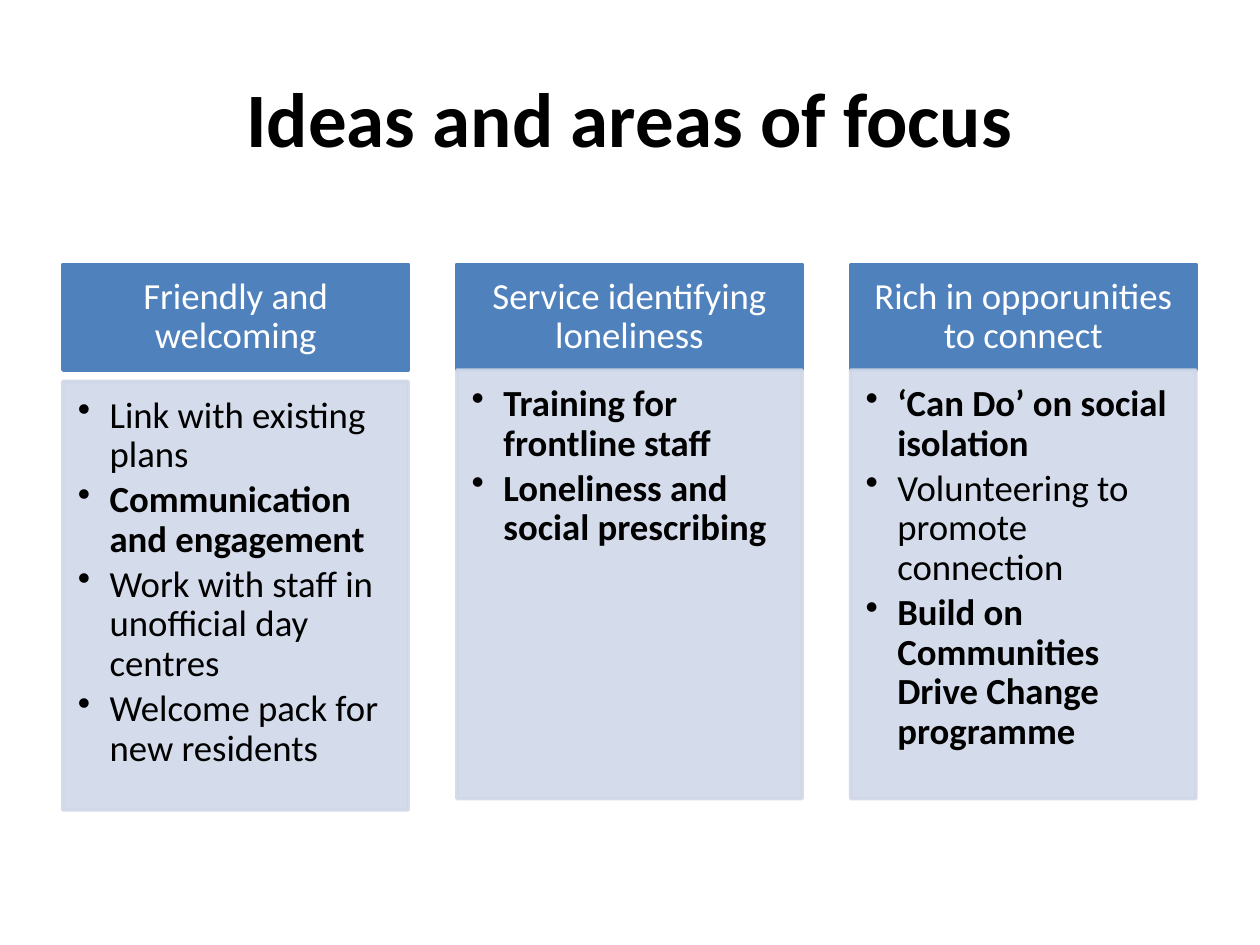
import pptx
import pptx.util
import pptx.dml.color
import pptx.enum.shapes
import pptx.enum.text
import pptx.oxml.ns
import lxml.etree
from pptx.util import Cm

TITLE = "Ideas and areas of focus"
COLUMNS = [
    {"heading": "Friendly and welcoming", "gap": 0.23, "ideas": [
        ("Link with existing plans", False),
        ("Communication and engagement", True),
        ("Work with staff in unofficial day centres", False),
        ("Welcome pack for new residents", False)]},
    {"heading": "Service identifying loneliness", "gap": 0, "ideas": [
        ("Training for frontline staff", True),
        ("Loneliness and social prescribing", True)]},
    {"heading": "Rich in opporunities to connect", "gap": 0, "ideas": [
        ("‘Can Do’ on social isolation", True),
        ("Volunteering to promote connection", False),
        ("Build on Communities Drive Change programme", True)]},
]
COLORS = {"heading": "4F81BD", "body": "D0D8E8", "dark": "000000", "light": "FFFFFF"}
FONT = "Calibri"
LEFT, TOP, WIDTH, PITCH = 1.27, 5.33, 6.96, 7.94
HEADING_HEIGHT, BODY_HEIGHT = 2.13, 8.64
HEADING_INSETS = (0.41, 0.23, 0.41, 0.23)
BODY_INSETS = (0.3, 0.3, 0.41, 0.46)

ALIGN = pptx.enum.text.PP_ALIGN
ANCHOR = pptx.enum.text.MSO_ANCHOR


def rgb(name):
    return pptx.dml.color.RGBColor.from_string(COLORS[name])


def add_child(parent, tag, **attributes):
    return lxml.etree.SubElement(parent, pptx.oxml.ns.qn(tag), **attributes)


def write(paragraph, text, size=21, color="dark", bold=False, align=ALIGN.LEFT,
          line_spacing=None, space_after=None, bullet=False):
    paragraph.alignment = align
    paragraph.line_spacing = line_spacing
    if space_after is not None:
        paragraph.space_after = pptx.util.Pt(space_after)
    if bullet:
        paragraph.level = 1
        properties = paragraph._p.get_or_add_pPr()
        properties.set("marL", str(Cm(0.64)))
        properties.set("indent", str(-Cm(0.64)))
        add_child(properties, "a:buChar", char="•")
    run = paragraph.add_run()
    run.text = text
    run.font.name = FONT
    run.font.size = pptx.util.Pt(size)
    run.font.bold = bold
    run.font.color.rgb = rgb(color)


def set_frame(frame, insets, anchor):
    frame.word_wrap = True
    frame.vertical_anchor = anchor
    frame.margin_left, frame.margin_top, frame.margin_right, frame.margin_bottom = map(Cm, insets)


def add_box(slide, left, top, height, color, insets, anchor, opacity=100):
    shape = slide.shapes.add_shape(pptx.enum.shapes.MSO_SHAPE.RECTANGLE,
                                   Cm(left), Cm(top), Cm(WIDTH), Cm(height))
    shape.shadow.inherit = False
    shape.line.width = pptx.util.Pt(2)
    for fill in (shape.fill, shape.line.fill):
        fill.solid()
        fill.fore_color.rgb = rgb(color)
    if opacity < 100:
        for element in shape._element.spPr.iter(pptx.oxml.ns.qn("a:srgbClr")):
            add_child(element, "a:alpha", val=str(opacity * 1000))
    set_frame(shape.text_frame, insets, anchor)
    return shape.text_frame


def add_column(slide, left, column):
    frame = add_box(slide, left, TOP, HEADING_HEIGHT, "heading", HEADING_INSETS, ANCHOR.MIDDLE)
    write(frame.paragraphs[0], column["heading"], color="light", align=ALIGN.CENTER,
          line_spacing=0.9)
    body_top = TOP + HEADING_HEIGHT + column["gap"]
    frame = add_box(slide, left, body_top, BODY_HEIGHT, "body", BODY_INSETS, ANCHOR.TOP, opacity=90)
    for index, (idea, bold) in enumerate(column["ideas"]):
        paragraph = frame.add_paragraph() if index else frame.paragraphs[0]
        write(paragraph, idea, bold=bold, line_spacing=0.9, space_after=3, bullet=True)


def main():
    presentation = pptx.Presentation()
    presentation.slide_width, presentation.slide_height = Cm(25.4), Cm(19.05)
    slide = presentation.slides.add_slide(presentation.slide_layouts[6])
    title = slide.shapes.add_textbox(Cm(LEFT), Cm(0.76), Cm(22.86), Cm(3.18))
    set_frame(title.text_frame, (0.25, 0.13, 0.25, 0.13), ANCHOR.MIDDLE)
    write(title.text_frame.paragraphs[0], TITLE, size=44, bold=True, align=ALIGN.CENTER)
    for index, column in enumerate(COLUMNS):
        add_column(slide, LEFT + index * PITCH, column)
    presentation.save("out.pptx")


if __name__ == "__main__":
    main()
